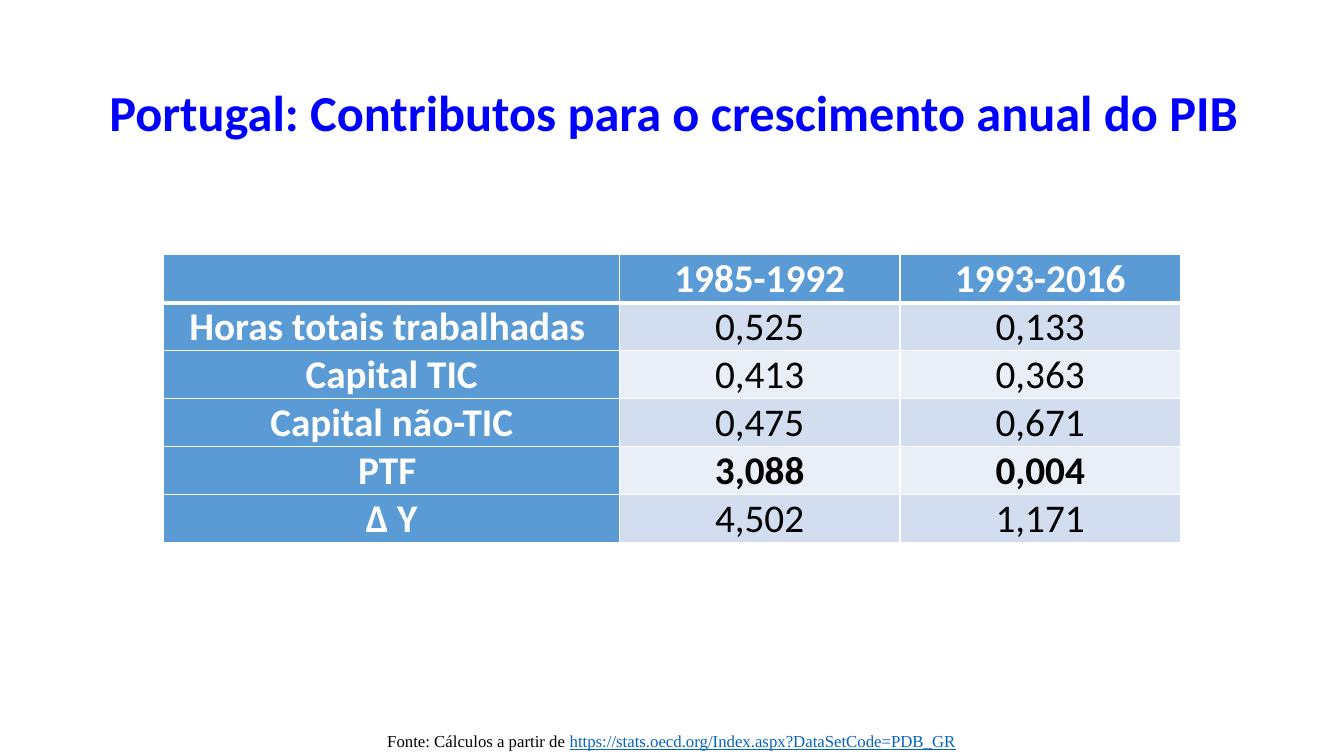
import pptx
import pptx.dml.color
import pptx.enum.text
import pptx.oxml
import pptx.oxml.ns
import pptx.util

Cm, Pt = pptx.util.Cm, pptx.util.Pt
CENTER = pptx.enum.text.PP_ALIGN.CENTER

# Content
TITLE = "Portugal: Contributos para o crescimento anual do PIB"
TABLE_ROWS = [
    ("", "1985-1992", "1993-2016"),
    ("Horas totais trabalhadas ", "0,525", "0,133"),
    ("Capital TIC", "0,413", "0,363"),
    ("Capital não-TIC", "0,475", "0,671"),
    ("PTF ", "3,088", "0,004"),
    ("Δ Y", "4,502", "1,171"),
]
BOLD_ROW = 4
SOURCE_LABEL = "Fonte: Cálculos a partir de "
SOURCE_ADDRESS = "https://stats.oecd.org/Index.aspx?DataSetCode=PDB_GR"

# Formats
HEADER_FILL, BAND_FILLS = "5B9BD5", ("EAEFF7", "D2DEEF")
TITLE_FORMAT = {"name": "Calibri", "size": Pt(36), "bold": True}
CELL_FORMAT = {"name": "Calibri", "size": Pt(28)}
SOURCE_FORMAT = {"name": "Times New Roman", "size": Pt(12)}
CELL_LAYOUT = {
    "margin_left": Cm(0.13), "margin_right": Cm(0.13),
    "margin_top": 0, "margin_bottom": 0,
    "vertical_anchor": pptx.enum.text.MSO_ANCHOR.BOTTOM,
}

# Geometry
TITLE_BOX = (2.18, 1.9, 29.62, 1.8)
SOURCE_BOX = (0.38, 18.28, 33.1, 0.77)
TABLE_LEFT, TABLE_TOP, ROW_HEIGHT = 4.13, 6.42, 1.21
COLUMN_WIDTHS = (11.48, 7.07, 7.07)


def color(value):
    return pptx.dml.color.RGBColor.from_string(value)


def apply(target, values):
    for name, value in values.items():
        setattr(target, name, value)


def add_run(paragraph, text, text_color, values):
    paragraph.alignment = CENTER
    run = paragraph.add_run()
    run.text = text
    apply(run.font, values)
    run.font.color.rgb = color(text_color)


def add_border(cell, side, points):
    cell._tc.get_or_add_tcPr().append(pptx.oxml.parse_xml(
        f'<a:ln{side} {pptx.oxml.ns.nsdecls("a")} w="{Pt(points)}">'
        f'<a:solidFill><a:srgbClr val="FFFFFF"/></a:solidFill></a:ln{side}>'))


presentation = pptx.Presentation()
presentation.slide_width, presentation.slide_height = Cm(33.87), Cm(19.05)
slide = presentation.slides.add_slide(presentation.slide_layouts[5])

# Table
table_shape = slide.shapes.add_table(
    len(TABLE_ROWS), len(COLUMN_WIDTHS), Cm(TABLE_LEFT), Cm(TABLE_TOP),
    Cm(sum(COLUMN_WIDTHS)), Cm(ROW_HEIGHT * len(TABLE_ROWS)))
table = table_shape.table
for column, width in zip(table.columns, COLUMN_WIDTHS):
    column.width = Cm(width)

for row_index, texts in enumerate(TABLE_ROWS):
    table.rows[row_index].height = Cm(ROW_HEIGHT)
    for column_index, text in enumerate(texts):
        cell = table.cell(row_index, column_index)
        is_header = row_index == 0 or column_index == 0
        apply(cell, CELL_LAYOUT)
        for side in "LRTB":
            under_header = (row_index, side) in ((0, "B"), (1, "T"))
            add_border(cell, side, 3 if under_header else 1)
        cell.fill.solid()
        cell.fill.fore_color.rgb = color(
            HEADER_FILL if is_header else BAND_FILLS[row_index % 2])
        if text:
            add_run(cell.text_frame.paragraphs[0], text,
                    "FFFFFF" if is_header else "000000",
                    {**CELL_FORMAT, "bold": is_header or row_index == BOLD_ROW})

# Title
title = slide.shapes.title
apply(title, dict(zip(("left", "top", "width", "height"), map(Cm, TITLE_BOX))))
add_run(title.text_frame.paragraphs[0], TITLE, "0000FF", TITLE_FORMAT)

# Source line
source = slide.shapes.add_textbox(*map(Cm, SOURCE_BOX))
source.text_frame.word_wrap = True
paragraph = source.text_frame.paragraphs[0]
add_run(paragraph, SOURCE_LABEL, "000000", SOURCE_FORMAT)
add_run(paragraph, SOURCE_ADDRESS, "0563C1", {**SOURCE_FORMAT, "underline": True})

presentation.save("out.pptx")
